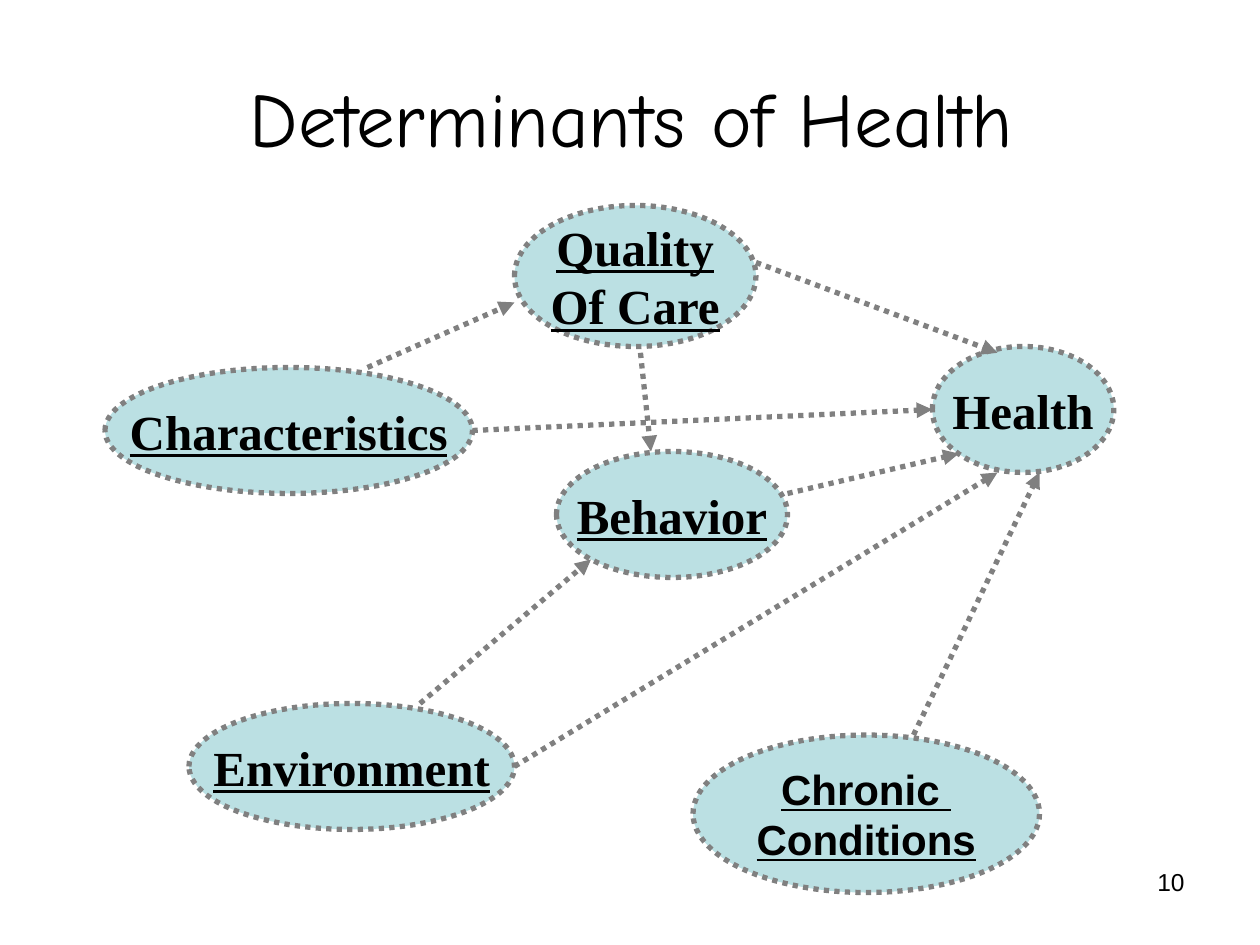
from lxml import etree
from pptx import Presentation
from pptx.enum import dml, shapes, text
from pptx.dml.color import RGBColor
from pptx.oxml import ns
from pptx.util import Pt

COLORS = {"text": "000000", "fill": "BBE0E3", "line": "808080"}
SERIF, SANS, TITLE = "Times New Roman", "Arial", "Comic Neue"

# Ellipses: lines of text, box in points, font, size, underlined
FACTORS = [
    (["Health"], (532.8, 198, 103.7, 72), SERIF, 28, False),
    (["Behavior"], (318, 258, 132, 72), SERIF, 28, True),
    (["Environment"], (108, 402, 186, 72), SERIF, 28, True),
    (["Characteristics"], (60, 210, 210, 72), SERIF, 28, True),
    (["Quality", "Of Care"], (294, 117.4, 138, 80.6), SERIF, 28, True),
    (["Chronic ", "Conditions"], (396, 420, 198, 90), SANS, 24, True),
]

# Arrows: start and end in points
ARROWS = [
    ((294, 438), (570, 270)),      # Environment to Health
    ((270, 246), (532.8, 234)),    # Characteristics to Health
    ((432, 150), (570, 201.6)),    # Quality Of Care to Health
    ((210, 210), (294, 172.8)),    # Characteristics to Quality Of Care
    ((450, 282), (547.9, 259.2)),  # Behavior to Health
    ((240, 402), (337.7, 319.7)),  # Environment to Behavior
    ((366, 201.6), (372, 258)),    # Quality Of Care to Behavior
    ((522, 420), (594, 270)),      # Chronic Conditions to Health
]


def rgb(name):
    return RGBColor.from_string(COLORS[name])


def write(tf, lines, font, size, align, bold=False, underline=False):
    for i, line in enumerate(lines):
        p = tf.add_paragraph() if i else tf.paragraphs[0]
        p.text = line
        p.alignment = align
        p.font.name, p.font.size = font, Pt(size)
        p.font.bold, p.font.underline = bold, underline
        p.font.color.rgb = rgb("text")


def dot_line(line):
    line.color.rgb = rgb("line")
    line.width = Pt(3)
    line.dash_style = dml.MSO_LINE.ROUND_DOT


def add_title(s, box):
    sp = s.shapes.title
    sp.left, sp.top, sp.width, sp.height = map(Pt, box)
    sp.text_frame.vertical_anchor = text.MSO_ANCHOR.MIDDLE
    write(sp.text_frame, ["Determinants of Health"], TITLE, 44, text.PP_ALIGN.CENTER)


def add_page_number(s, box):
    tf = s.shapes.add_textbox(*map(Pt, box)).text_frame
    tf.word_wrap = True
    write(tf, ["10"], SANS, 14, text.PP_ALIGN.RIGHT)


def add_factor(s, lines, box, font, size, underline):
    sp = s.shapes.add_shape(shapes.MSO_SHAPE.OVAL, *map(Pt, box))
    sp.shadow.inherit = False
    sp.fill.solid()
    sp.fill.fore_color.rgb = rgb("fill")
    dot_line(sp.line)
    tf = sp.text_frame
    tf.word_wrap = False
    tf.vertical_anchor = text.MSO_ANCHOR.MIDDLE
    write(tf, lines, font, size, text.PP_ALIGN.CENTER, True, underline)


def add_arrow(s, start, end):
    c = s.shapes.add_connector(shapes.MSO_CONNECTOR.STRAIGHT, *map(Pt, start + end))
    dot_line(c.line)
    etree.SubElement(c.line._get_or_add_ln(), ns.qn("a:tailEnd"), type="triangle")
    etree.SubElement(c._element.spPr, ns.qn("a:effectLst"))


def main():
    prs = Presentation()
    prs.slide_width, prs.slide_height = Pt(720), Pt(540)
    s = prs.slides.add_slide(prs.slide_layouts.get_by_name("Title Only"))
    add_title(s, (2, 21.6, 718, 90))
    add_page_number(s, (516, 492, 168, 37.5))
    for factor in FACTORS:
        add_factor(s, *factor)
    for start, end in ARROWS:
        add_arrow(s, start, end)
    prs.save("out.pptx")


if __name__ == "__main__":
    main()
